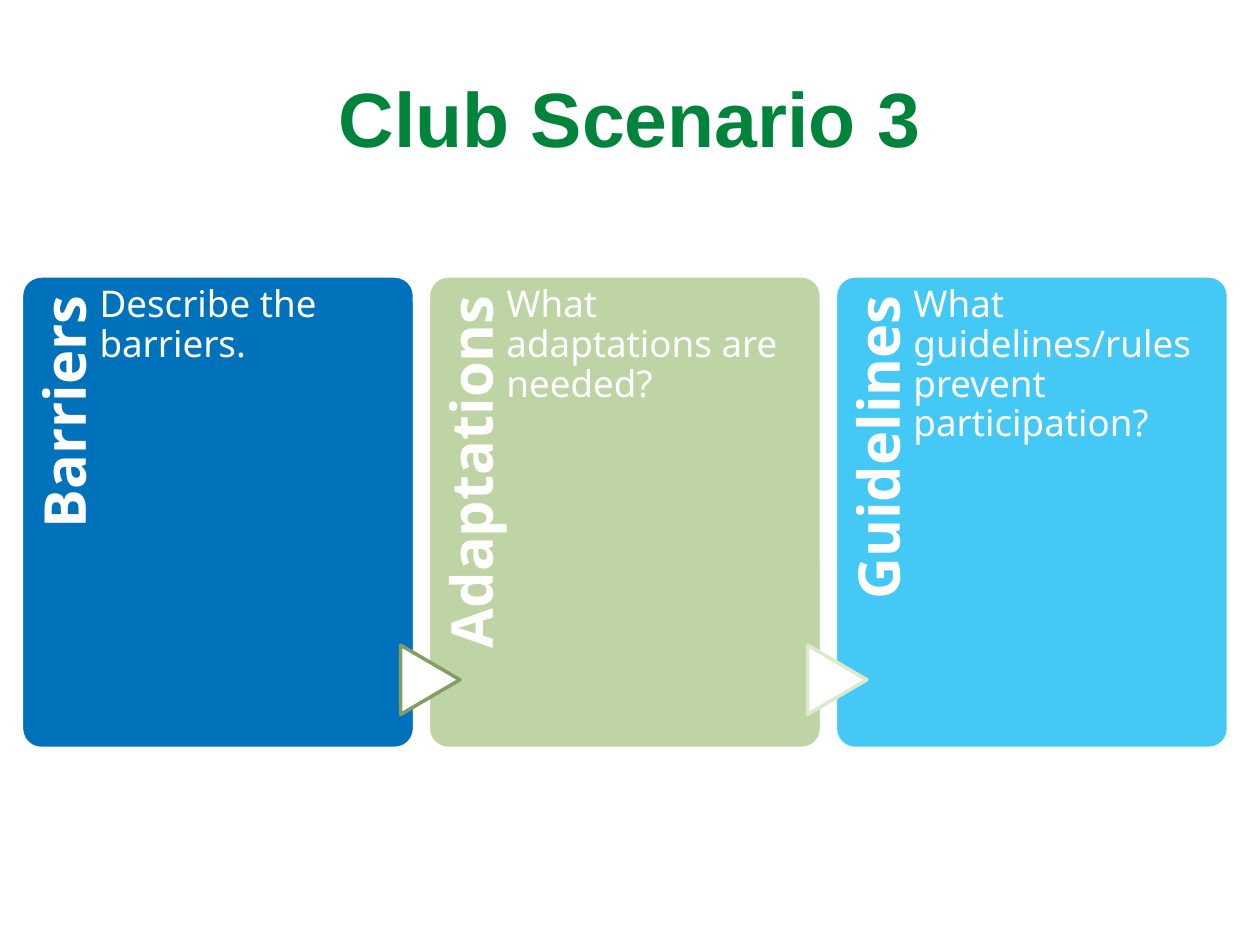
from pptx import Presentation
from pptx.dml.color import RGBColor
from pptx.enum.shapes import MSO_SHAPE as Shape
from pptx.enum.text import MSO_ANCHOR as Anchor, PP_ALIGN as Align
from pptx.util import Inches, Pt

# Content: heading, question, card colour, outline of the arrow leading in
TITLE = "Club Scenario 3"
CARDS = [
    ("Barriers", "Describe the barriers.", "blue", None),
    ("Adaptations", "What adaptations are needed?", "sage", "olive"),
    ("Guidelines", "What guidelines/rules prevent participation?", "sky", "pale"),
]
COLORS = {
    "white": "FFFFFF", "green": "00833B", "blue": "0072BC", "sage": "BFD4A5",
    "sky": "44C8F5", "olive": "859D63", "pale": "DCEACB",
}

# Layout in inches
CARD_LEFT, CARD_TOP, CARD_WIDTH, CARD_HEIGHT = 0.17, 2.19, 3.12, 3.75
CARD_STEP = 3.23


def color(name):
    return RGBColor.from_string(COLORS[name])


def add_shape(slide, kind, box, fill, line):
    shape = slide.shapes.add_shape(kind, *map(Inches, box))
    shape.shadow.inherit = False
    shape.fill.solid()
    shape.fill.fore_color.rgb = color(fill)
    shape.line.color.rgb = color(line)
    shape.line.width = Pt(2)
    return shape


def add_text(slide, box, text, size, font="Noto Sans", ink="white", bold=False,
             align=Align.LEFT, anchor=Anchor.TOP, margins=(0, 0.08, 0, 0), spacing=0.9):
    shape = slide.shapes.add_textbox(*map(Inches, box))
    frame = shape.text_frame
    frame.word_wrap = True
    frame.vertical_anchor = anchor
    (frame.margin_left, frame.margin_top,
     frame.margin_right, frame.margin_bottom) = map(Inches, margins)
    paragraph = frame.paragraphs[0]
    paragraph.alignment = align
    paragraph.line_spacing = spacing
    run = paragraph.add_run()
    run.text = text
    run.font.name = font
    run.font.size = Pt(size)
    run.font.bold = bold
    run.font.color.rgb = color(ink)
    return shape


def main():
    presentation = Presentation()
    presentation.slide_width, presentation.slide_height = Inches(10), Inches(7.5)
    slide = presentation.slides.add_slide(presentation.slide_layouts[6])

    # Title
    add_text(slide, (0.5, 0.3, 9, 1.25), TITLE, 44, "Arial", "green", True,
             Align.CENTER, Anchor.MIDDLE, (0.1, 0.05, 0.1, 0.05), 1.0)

    for index, (heading, question, fill, arrow_line) in enumerate(CARDS):
        left = CARD_LEFT + index * CARD_STEP

        # Card
        card = add_shape(slide, Shape.ROUNDED_RECTANGLE,
                         (left, CARD_TOP, CARD_WIDTH, CARD_HEIGHT), fill, "white")
        card.adjustments[0] = 0.05

        # Heading running up the card's left side
        label = add_text(slide, (left - 1.23, 3.41, 3.07, 0.62), heading, 33, bold=True,
                         align=Align.RIGHT, margins=(0, 0.12, 0.16, 0))
        label.rotation = 270

        # Arrow from the previous card
        if arrow_line:
            arrow = add_shape(slide, Shape.FLOWCHART_EXTRACT,
                              (left - 0.26, 5.16, 0.55, 0.47), "white", arrow_line)
            arrow.rotation = 90

        # Question
        add_text(slide, (left + 0.62, CARD_TOP, 2.33, CARD_HEIGHT), question, 21)

    presentation.save("out.pptx")


if __name__ == "__main__":
    main()
